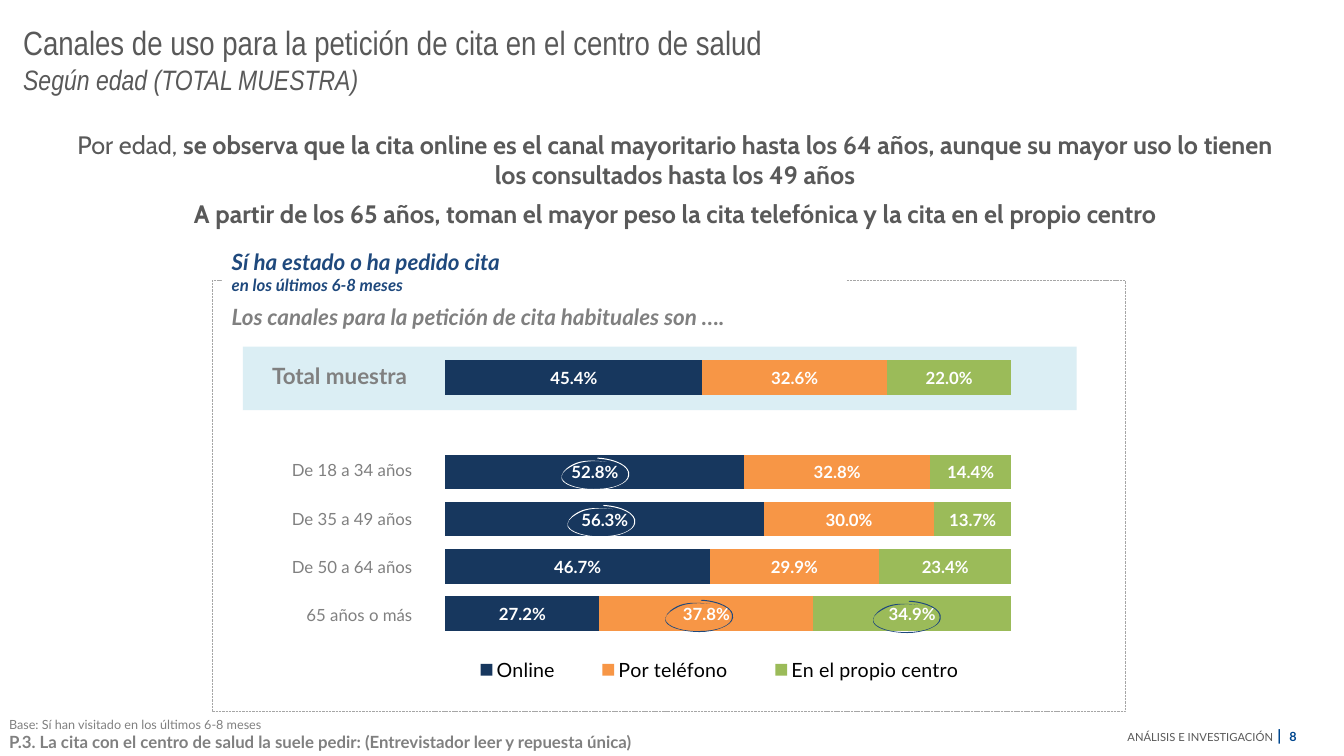
from dataclasses import dataclass
from lxml.etree import SubElement
from pptx import Presentation
from pptx.chart.data import CategoryChartData
from pptx.dml.color import RGBColor
from pptx.enum.chart import XL_CHART_TYPE, XL_LABEL_POSITION, XL_LEGEND_POSITION
from pptx.enum.dml import MSO_LINE
from pptx.enum.shapes import MSO_SHAPE
from pptx.enum.text import MSO_ANCHOR, MSO_AUTO_SIZE, PP_ALIGN
from pptx.oxml.ns import qn
from pptx.util import Inches, Pt


@dataclass(frozen=True)
class Theme:
    text: str = "595959"
    gray: str = "808080"
    blue: str = "1F497D"
    mark: str = "00478F"
    band: str = "DBEEF4"
    edge: str = "A6A6A6"
    white: str = "FFFFFF"
    black: str = "000000"
    bars: tuple = ("17375E", "F79646", "9BBB59")
    main: str = "Lato"
    head: str = "Arial Narrow"
    lead: str = "Cabin"
    huge: int = 24
    big: int = 20
    large: int = 18
    mid: int = 16
    key: int = 14
    base: int = 12
    page: int = 11
    plot: int = 10
    note: int = 9
    tiny: int = 8


T = Theme()

TITLE = [[("Canales de uso para la petición de cita en el centro de salud", T.huge, T.text, ""),
          "\n",
          ("Según edad (TOTAL MUESTRA)", T.big, T.text, "i")]]
LEAD = [[("Por edad, ", T.large, T.text, ""),
         ("se observa que la cita online es el canal mayoritario hasta los 64 años, "
          "aunque su mayor uso lo tienen los consultados hasta los 49 años", T.large, T.text, "b")],
        [("A partir de los 65 años, toman el mayor peso la cita telefónica", T.large, T.text, "b"),
         (" ", T.mid, T.text, "b"),
         ("y la cita en el propio centro", T.large, T.text, "b")]]
PANEL = [[("Sí ha estado o ha pedido cita ", T.mid, T.blue, "bi"),
          "\n",
          ("en los últimos 6-8 meses", T.base, T.blue, "bi")],
         [("Los canales para la petición de cita habituales son ….", T.mid, T.gray, "bi")]]
BASE = [[("Base: Sí han visitado en los últimos 6-8 meses", T.note, T.gray, "")],
        [("P.3. La cita con el centro de salud la suele pedir: "
          "(Entrevistador leer y repuesta única)", T.base, T.gray, "b")]]
FOOT = [[("ANÁLISIS E INVESTIGACIÓN", T.tiny, T.text, ""),
         (" ", T.page, T.text, ""),
         ("| ", T.page, T.mark, "b"),
         ("8", T.note, T.mark, "b")]]
ROWS = ["Total muestra ", "", "De 18 a 34 años", "De 35 a 49 años",
        "De 50 a 64 años", "65 años o más"]
DATA = {"Online": (45.4, None, 52.8, 56.3, 46.7, 27.2),
        "Por teléfono": (32.6, None, 32.8, 30, 29.9, 37.8),
        "En el propio centro": (22, None, 14.4, 13.7, 23.4, 34.9)}
RINGS = [(5.54, 4.54, T.white), (5.6, 5.01, T.white),
         (6.57, 5.95, T.blue), (8.63, 5.96, T.blue)]
START = (47, 4)
CURVES = [(37, 3), (27, 2), (18, 5), (10, 8), (4, 13), (3, 18), (0, 27), (21, 32), (37, 32),
          (52, 32), (69, 26), (70, 18), (72, 8), (56, 1), (39, 0), (38, 0), (38, 1), (39, 1),
          (55, 2), (70, 8), (69, 17), (69, 26), (53, 31), (38, 31), (23, 32), (3, 27), (3, 19),
          (3, 14), (10, 10), (16, 7), (25, 3), (36, 3), (47, 4), (48, 4), (48, 4), (47, 4)]


def color(code):
    return RGBColor.from_string(code)


def style(font, face, size, code, marks=""):
    font.name, font.size = face, Pt(size)
    font.color.rgb = color(code)
    font.bold, font.italic = "b" in marks, "i" in marks


def write(frame, paras, face, align=PP_ALIGN.LEFT, anchor=MSO_ANCHOR.TOP, after=0, wrap=True):
    frame.word_wrap = wrap
    frame.auto_size = MSO_AUTO_SIZE.NONE
    frame.vertical_anchor = anchor
    for at, runs in enumerate(paras):
        para = frame.add_paragraph() if at else frame.paragraphs[0]
        para.alignment = align
        para.space_after = Pt(after)
        for item in runs:
            if item == "\n":
                para.add_line_break()
                continue
            run = para.add_run()
            run.text = item[0]
            style(run.font, face, *item[1:])


def box(area, fill=None):
    rect = shapes.add_shape(MSO_SHAPE.RECTANGLE, *map(Inches, area))
    rect.shadow.inherit = False
    rect.line.fill.background()
    if fill:
        rect.fill.solid()
        rect.fill.fore_color.rgb = color(fill)
    else:
        rect.fill.background()
    return rect


def place(owner, spots, inner=False):
    for old in owner.findall(qn("c:layout")):
        owner.remove(old)
    layout = SubElement(owner, qn("c:layout"))
    owner.remove(layout)
    owner.insert(1 if owner.tag == qn("c:legend") else 0, layout)
    manual = SubElement(layout, qn("c:manualLayout"))
    parts = [("layoutTarget", "inner")] if inner else []
    parts += [("xMode", "edge"), ("yMode", "edge"), *zip("xywh", spots)]
    for name, val in parts:
        SubElement(manual, qn("c:" + name)).set("val", str(val))


def ring(left, top, code):
    pen = shapes.build_freeform(*START, scale=Inches(0.01))
    pen.add_line_segments(CURVES, close=True)
    loop = pen.convert_to_shape(Inches(left), Inches(top))
    lines = list(loop._element.iter(qn("a:lnTo")))
    for at in range(0, len(lines), 3):
        curve = SubElement(lines[at].getparent(), qn("a:cubicBezTo"))
        lines[at].addprevious(curve)
        for line in lines[at:at + 3]:
            curve.append(line[0])
            line.getparent().remove(line)
    loop.shadow.inherit = False
    loop.fill.solid()
    loop.fill.fore_color.rgb = color(code)
    loop.line.fill.background()


def draw():
    data = CategoryChartData()
    data.categories = [str(n + 1) for n in range(len(ROWS))]
    for name, vals in DATA.items():
        data.add_series(name, vals)
    area = map(Inches, (4.3, 3.51, 5.91, 4.02))
    chart = shapes.add_chart(XL_CHART_TYPE.BAR_STACKED, *area, data).chart
    style(chart.font, "Calibri", T.plot, T.black)
    chart.has_title = False
    cats, vals = chart.category_axis, chart.value_axis
    cats.reverse_order = True
    cats.visible = vals.visible = False
    vals.has_major_gridlines = False
    vals.minimum_scale, vals.maximum_scale = 0, 100
    plot = chart.plots[0]
    plot.gap_width, plot.overlap = 37, 100
    plot.vary_by_categories = False
    for bar, code in zip(plot.series, T.bars):
        bar.format.fill.solid()
        bar.format.fill.fore_color.rgb = color(code)
        tags = bar.data_labels
        tags.show_value = True
        tags.position = XL_LABEL_POSITION.CENTER
        tags.number_format, tags.number_format_is_linked = r"0.0\%", False
        style(tags.font, T.main, T.base, T.white, "b")
    chart.has_legend = True
    key = chart.legend
    key.position = XL_LEGEND_POSITION.BOTTOM
    key.include_in_layout = False
    style(key.font, T.main, T.key, T.black)
    place(plot._element.getparent(), (0.02, 0, 0.95, 0.7), True)
    place(key._element, (0.01, 0.74, 0.94, 0.08))


def label():
    table = shapes.add_table(len(ROWS), 1, *map(Inches, (2.41, 3.51, 1.69, 2.82))).table
    table.first_row = table.horz_banding = False
    table._tbl.tblPr[0].text = "{2D5ABB26-0587-4C30-8999-92F81FD0307C}"
    for at, name in enumerate(ROWS):
        table.rows[at].height = Inches(0.48 if at else 0.43)
        cell = table.cell(at, 0)
        cell.fill.background()
        cell.vertical_anchor = MSO_ANCHOR.MIDDLE
        cell.margin_left = cell.margin_right = cell.margin_top = Inches(0.01)
        cell.margin_bottom = 0
        para = cell.text_frame.paragraphs[0]
        para.alignment = PP_ALIGN.RIGHT
        if name:
            run = para.add_run()
            run.text = name
            style(run.font, T.main, T.base if at else T.mid, T.gray, "" if at else "b")


deck = Presentation()
deck.slide_width, deck.slide_height = Inches(13.33), Inches(7.5)
shapes = deck.slides.add_slide(deck.slide_layouts[5]).shapes
title = shapes.title
title.left, title.top, title.width, title.height = map(Inches, (0.13, 0.17, 11.42, 0.84))
write(title.text_frame, TITLE, T.head)

foot = shapes.add_textbox(*map(Inches, (11.05, 7.15, 1.91, 0.29)))
write(foot.text_frame, FOOT, T.main, PP_ALIGN.RIGHT, MSO_ANCHOR.MIDDLE, wrap=False)
foot.text_frame.paragraphs[0].runs[2].font._element.set("spc", "150")
box((2.41, 3.44, 8.27, 0.63), T.band)
base = shapes.add_textbox(*map(Inches, (0, 7.06, 9.19, 0.44)))
base.text_frame.margin_top = base.text_frame.margin_bottom = Inches(0.04)
base.text_frame.margin_left = base.text_frame.margin_right = Inches(0.09)
write(base.text_frame, BASE, T.main, anchor=MSO_ANCHOR.BOTTOM)
draw()
label()
edge = box((2.1, 2.78, 9.06, 4.28)).line
edge.color.rgb = color(T.edge)
edge.width, edge.dash_style = Pt(0.25), MSO_LINE.SQUARE_DOT
write(box((2.2, 2.41, 6.19, 0.93), T.white).text_frame, PANEL, T.main, after=6)
for spot in RINGS[::2]:
    ring(*spot)
write(box((0.59, 1.35, 12.21, 0.85), T.white).text_frame, LEAD, T.lead,
      PP_ALIGN.CENTER, MSO_ANCHOR.MIDDLE, 6)
for spot in RINGS[1::2]:
    ring(*spot)
deck.save("out.pptx")
